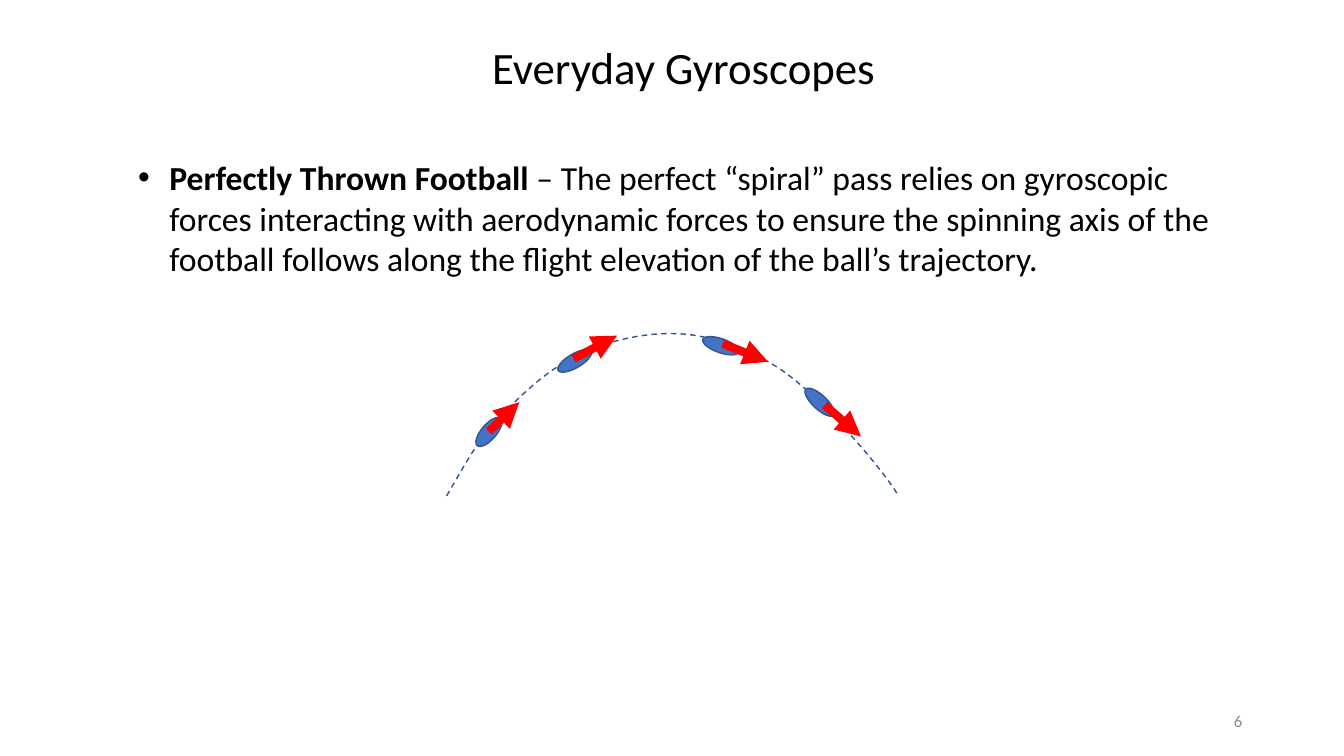
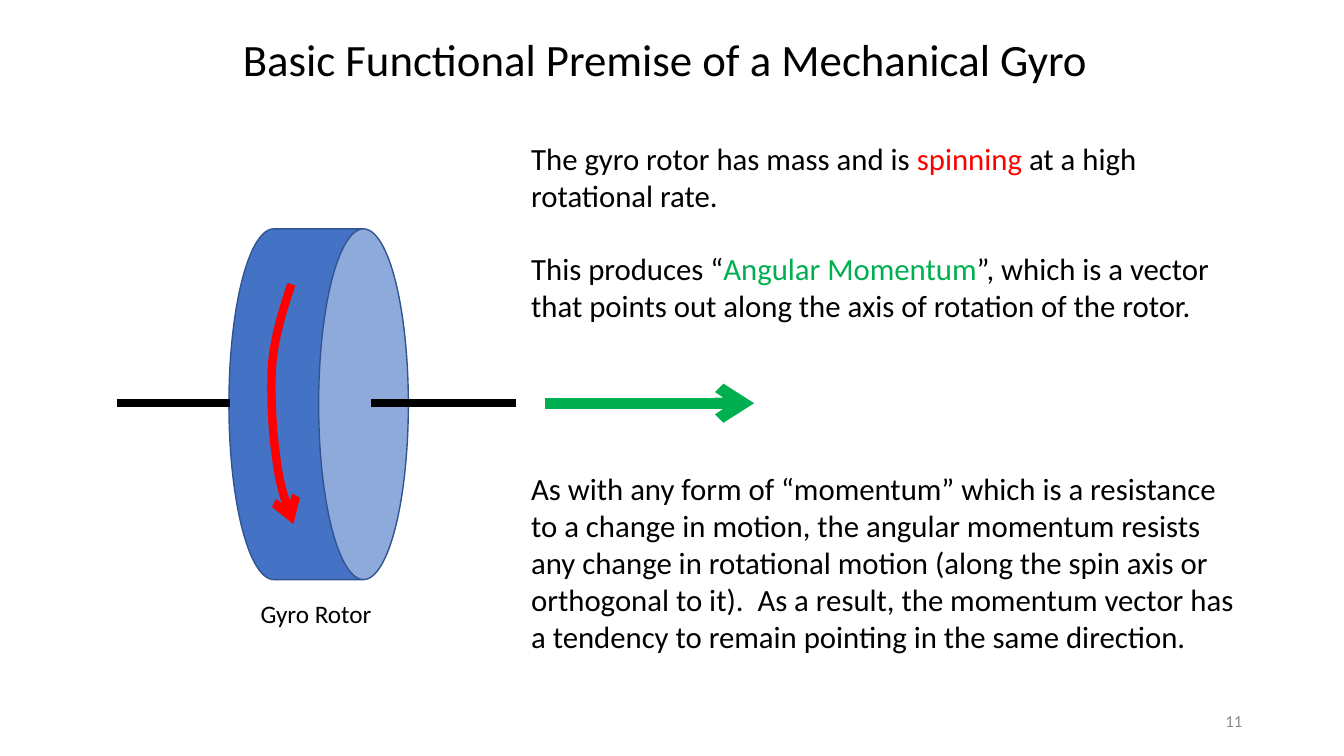
from dataclasses import dataclass

from lxml import etree
from pptx import Presentation
from pptx.dml.color import RGBColor
from pptx.enum import dml, shapes, text
from pptx.oxml.ns import qn

PX = 9144  # 100 px to the inch


@dataclass(frozen=True)
class Theme:
    font: str = "Calibri"
    black: str = "000000"
    red: str = "FF0000"
    green: str = "00B050"
    blue: str = "4472C4"
    outline: str = "325491"
    grey: str = "8C8C8C"
    title: int = 32
    body: int = 24
    note: int = 22
    label: int = 18
    number: int = 12
    thin: int = 1
    thick: int = 6
    vector: int = 8


T = Theme()
ALIGN = text.PP_ALIGN

# Runs are (text, colour, bold); boxes are left, top, width, height in px.
FOOTBALL = {
    "title": "Everyday Gyroscopes",
    "title_box": (312, 34, 732, 64),
    "number": "6",
    "body_box": (127, 151, 1098, 131),
    "body": [
        ("Perfectly Thrown Football ", T.black, True),
        ("– The perfect “spiral” pass relies on gyroscopic forces interacting with "
         "aerodynamic forces to ensure the spinning axis of the football follows along "
         "the flight elevation of the ball’s trajectory.", T.black, False),
    ],
    # Bezier paths: a start point, then two control points and an end per segment
    "trajectory": [(443, 492), (464, 456), (474, 436), (497, 413),
                   (519, 389), (547, 364), (576, 351), (606, 337), (641, 330), (671, 331),
                   (702, 332), (735, 344), (762, 359), (789, 374), (811, 397), (833, 420),
                   (854, 442), (883, 477), (891, 492)],
    # ball box, ball rotation, spin axis start, spin axis end
    "balls": [((467, 421, 36, 15), 310.6, (485, 428), (515, 399)),
              ((551, 351, 38, 14), 329.8, (569, 356), (612, 333)),
              ((696, 336, 38, 14), 19.2, (717, 341), (762, 359)),
              ((794, 392, 38, 14), 43.1, (818, 402), (854, 433))],
}
ROTOR = {
    "title": "Basic Functional Premise of a Mechanical Gyro",
    "title_box": (116, 26, 1088, 64),
    "number": "11",
    "rotor": (142, 312, 348, 178),
    "axle_y": 400,
    "axles": [(368, 512), (116, 228)],
    "momentum": (541, 748),
    "spin": [(289, 282), (281, 306), (273, 331), (270, 360),
             (268, 388), (270, 428), (274, 454), (277, 481), (284, 501), (291, 520)],
    "label": ("Gyro Rotor", (187, 589, 253, 40)),
    "notes": [
        ((517, 134, 660, 84), [("The gyro rotor has mass and is ", T.black, False),
                               ("spinning", T.red, False),
                               (" at a high rotational rate.", T.black, False)]),
        ((517, 243, 734, 84), [("This produces “", T.black, False),
                               ("Angular Momentum", T.green, False),
                               ("”, which is a vector that points out along the axis of "
                                "rotation of the rotor.", T.black, False)]),
        ((517, 461, 724, 195), [
            ("As with any form of “momentum” which is a resistance to a change in motion, "
             "the angular momentum resists any change in rotational motion (along the spin "
             "axis or orthogonal to it).  As a result, the momentum vector has a tendency "
             "to remain pointing in the same direction.", T.black, False)]),
    ],
}
NUMBER_BOX = (942, 695, 300, 40)
BULLET_INDENT = 31


def emu(values):
    return [round(v * PX) for v in values]


def rgb(colour):
    return RGBColor.from_string(colour)


def write(sp, runs, size, align=ALIGN.LEFT, anchor=text.MSO_ANCHOR.TOP):
    tf = sp.text_frame
    tf.word_wrap = True
    tf.auto_size = text.MSO_AUTO_SIZE.NONE
    tf.vertical_anchor = anchor
    p = tf.paragraphs[0]
    p.alignment = align
    p.space_before = 0
    p.font.name, p.font.size = T.font, size * 12700
    for words, colour, bold in runs:
        r = p.add_run()
        r.text = words
        r.font.color.rgb = rgb(colour)
        r.font.bold = bold
    return p


def place(sp, box):
    sp.left, sp.top, sp.width, sp.height = emu(box)
    return sp


def add_text(s, box, runs, size, **style):
    return write(s.shapes.add_textbox(*emu(box)), runs, size, **style)


def style_line(sp, colour, width, head=None, dash=None):
    sp.line.color.rgb = rgb(colour)
    sp.line.width = width * 12700
    if dash:
        sp.line.dash_style = dash
    if head:
        ln = sp._element.spPr.find(qn("a:ln"))
        etree.SubElement(ln, qn("a:tailEnd"), type=head)


def add_line(s, start, end, colour, width, head=None):
    sp = s.shapes.add_connector(shapes.MSO_CONNECTOR.STRAIGHT, *emu(start + end))
    style_line(sp, colour, width, head)
    etree.SubElement(sp._element.spPr, qn("a:effectLst"))


def add_solid(s, kind, box, rotation):
    sp = s.shapes.add_shape(kind, *emu(box))
    sp.rotation = rotation
    sp.shadow.inherit = False
    sp.fill.solid()
    sp.fill.fore_color.rgb = rgb(T.blue)
    style_line(sp, T.outline, T.thin)
    return sp


def bezier_points(path, steps=12):
    """Sample a chain of cubic Bezier segments, start point included."""
    points = [path[0]]
    for i in range(0, len(path) - 1, 3):
        for k in range(1, steps + 1):
            t = k / steps
            weights = ((1 - t) ** 3, 3 * t * (1 - t) ** 2, 3 * t * t * (1 - t), t ** 3)
            points.append(tuple(sum(w * pt[axis] for w, pt in zip(weights, path[i:i + 4]))
                                for axis in (0, 1)))
    return points


def add_curve(s, path, *line, **style):
    start, *rest = [emu(pt) for pt in bezier_points(path)]
    builder = s.shapes.build_freeform(*start)
    builder.add_line_segments(rest, close=False)
    sp = builder.convert_to_shape()
    sp.fill.background()
    sp.shadow.inherit = False
    style_line(sp, *line, **style)


def add_slide(prs, layout, content):
    s = prs.slides.add_slide(prs.slide_layouts[layout])
    write(place(s.shapes.title, content["title_box"]),
          [(content["title"], T.black, False)], T.title, ALIGN.CENTER)
    add_text(s, NUMBER_BOX, [(content["number"], T.grey, False)], T.number,
             align=ALIGN.RIGHT, anchor=text.MSO_ANCHOR.MIDDLE)
    return s


def football_slide(prs):
    c = FOOTBALL
    s = add_slide(prs, 1, c)
    p = write(place(s.placeholders[1], c["body_box"]), c["body"], T.body)
    pPr = p._p.get_or_add_pPr()
    pPr.set("marL", str(BULLET_INDENT * PX))
    pPr.set("indent", str(-BULLET_INDENT * PX))
    add_curve(s, c["trajectory"], T.outline, T.thin, dash=dml.MSO_LINE.DASH)
    for box, rotation, _, _ in c["balls"]:
        add_solid(s, shapes.MSO_SHAPE.OVAL, box, rotation)
    for _, _, start, end in c["balls"]:
        add_line(s, start, end, T.red, T.thick, "triangle")


def rotor_slide(prs):
    c = ROTOR
    s = add_slide(prs, 5, c)
    rotor = add_solid(s, shapes.MSO_SHAPE.CAN, c["rotor"], 90)
    rotor.adjustments[0] = 0.53
    y = c["axle_y"]
    for x1, x2 in c["axles"]:
        add_line(s, (x1, y), (x2, y), T.black, T.thick)
    x1, x2 = c["momentum"]
    add_line(s, (x1, y), (x2, y), T.green, T.vector, "arrow")
    add_curve(s, c["spin"], T.red, T.thick, head="arrow")
    label, box = c["label"]
    add_text(s, box, [(label, T.black, False)], T.label, align=ALIGN.CENTER)
    for box, runs in c["notes"]:
        add_text(s, box, runs, T.note)


def main():
    prs = Presentation()
    prs.slide_width, prs.slide_height = emu((1333, 750))
    football_slide(prs)
    rotor_slide(prs)
    prs.save("out.pptx")


if __name__ == "__main__":
    main()
